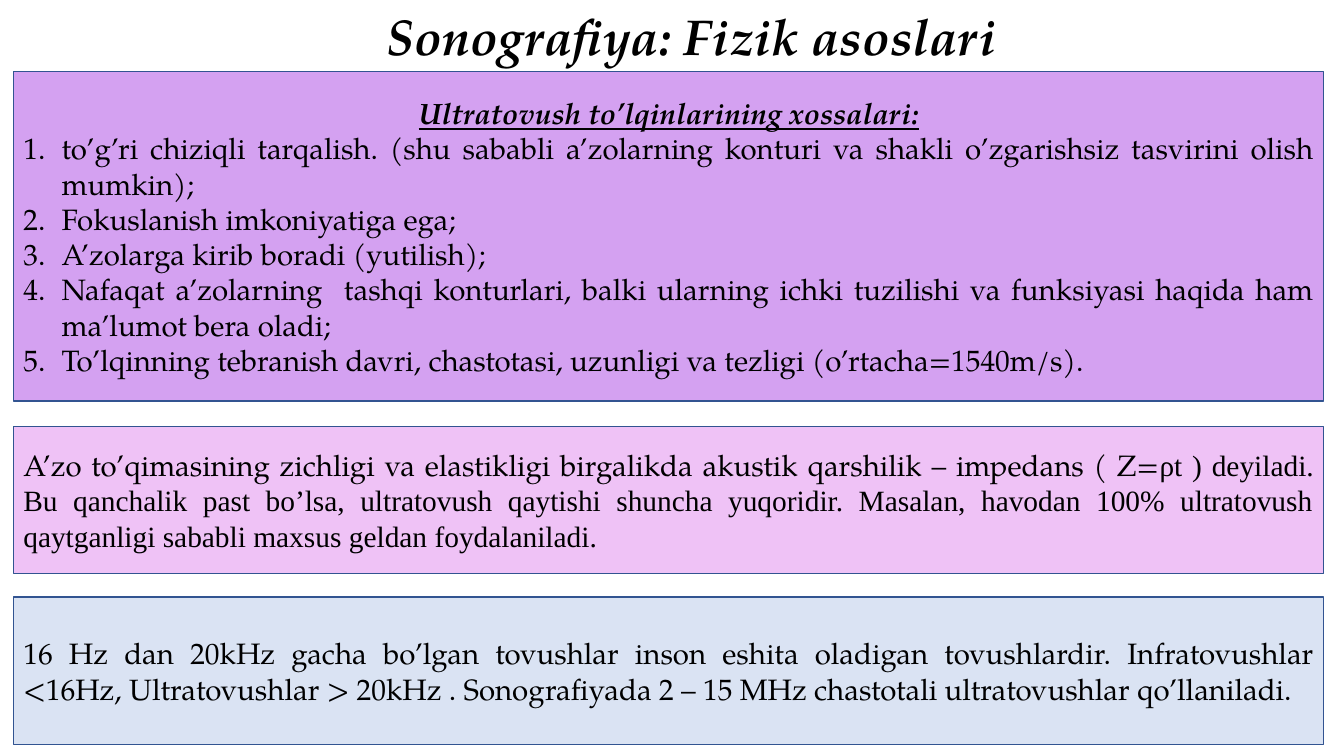
import pptx
import pptx.util
import pptx.dml.color
import pptx.enum.shapes
import pptx.enum.text
import pptx.oxml.ns
import lxml.etree

RGB = pptx.dml.color.RGBColor
BLACK = RGB(0x00, 0x00, 0x00)
EDGE = RGB(0x32, 0x54, 0x91)
VIOLET = RGB(0xD4, 0xA1, 0xF1)
PINK = RGB(0xEF, 0xC2, 0xF6)
BLUE = RGB(0xDA, 0xE3, 0xF3)

SERIF = "TeX Gyre Pagella"
TIMES = "Times New Roman"
ALIGN = pptx.enum.text.PP_ALIGN

WIDE = pptx.util.Inches(13.33)
HIGH = pptx.util.Inches(7.5)
LEFT, SPAN = 1, 97.5  # columns shared by all panels
HANG = pptx.util.Inches(0.38)

TRAITS = (
    "to’g’ri chiziqli tarqalish. (shu sababli a’zolarning konturi va shakli "
    "o’zgarishsiz tasvirini olish mumkin);",
    "Fokuslanish imkoniyatiga ega;",
    "A’zolarga kirib boradi (yutilish);",
    "Nafaqat a’zolarning  tashqi konturlari, balki ularning ichki tuzilishi "
    "va funksiyasi haqida ham ma’lumot bera oladi;",
    "To’lqinning tebranish davri, chastotasi, uzunligi va tezligi "
    "(o’rtacha=1540m/s).",
)


def area(col, row, cols, rows):
    """Turn cells of a 100 by 100 grid into slide lengths."""
    return (int(WIDE * col / 100), int(HIGH * row / 100),
            int(WIDE * cols / 100), int(HIGH * rows / 100))


def add_run(para, text, size=21, face=SERIF, strong=False, under=False):
    run = para.add_run()
    run.text = text
    font = run.font
    font.size = pptx.util.Pt(size)
    font.name = face
    font.bold = font.italic = strong
    font.underline = under
    font.color.rgb = BLACK


def number(para):
    """Give a paragraph a hanging automatic number."""
    props = para._p.get_or_add_pPr()
    props.set("marL", str(HANG))
    props.set("indent", str(-HANG))
    tag = pptx.oxml.ns.qn("a:buAutoNum")
    lxml.etree.SubElement(props, tag, type="arabicPeriod")


def add_panel(slide, row, rows, fill):
    """Draw a full-width panel and return its text frame."""
    kind = pptx.enum.shapes.MSO_SHAPE.RECTANGLE
    panel = slide.shapes.add_shape(kind, *area(LEFT, row, SPAN, rows))
    panel.shadow.inherit = False
    panel.fill.solid()
    panel.fill.fore_color.rgb = fill
    panel.line.color.rgb = EDGE
    panel.line.width = pptx.util.Pt(1)
    frame = panel.text_frame
    frame.word_wrap = True
    frame.vertical_anchor = pptx.enum.text.MSO_ANCHOR.MIDDLE
    frame.paragraphs[0].alignment = ALIGN.JUSTIFY
    return frame


def add_title(slide, text):
    box = slide.shapes.add_textbox(*area(28, 0, 64, 9.4))
    box.text_frame.word_wrap = True
    add_run(box.text_frame.paragraphs[0], text, size=36, strong=True)


def add_list(frame, head, items):
    first = frame.paragraphs[0]
    first.alignment = ALIGN.CENTER
    add_run(first, head, strong=True, under=True)
    for item in items:
        para = frame.add_paragraph()
        para.alignment = ALIGN.JUSTIFY
        number(para)
        add_run(para, item)


def main():
    deck = pptx.Presentation()
    deck.slide_width, deck.slide_height = WIDE, HIGH
    slide = deck.slides.add_slide(deck.slide_layouts[6])

    traits = add_panel(slide, 9.45, 43.6, VIOLET)
    add_list(traits, "Ultratovush to’lqinlarining xossalari:", TRAITS)

    add_title(slide, "Sonografiya: Fizik asoslari")

    sounds = add_panel(slide, 78.95, 19.5, BLUE).paragraphs[0]
    add_run(sounds, "16 Hz dan 20kHz gacha bo’lgan tovushlar inson eshita "
            "oladigan tovushlardir. Infratovushlar <16Hz, Ultratovushlar "
            "> 20kHz . Sonografiyada 2 – 15 MHz chastotali ultratovushlar "
            "qo’llaniladi.")

    echo = add_panel(slide, 56.4, 19.5, PINK).paragraphs[0]
    add_run(echo, "A’zo to’qimasining zichligi va elastikligi birgalikda "
            "akustik qarshilik – impedans ( Z=")
    add_run(echo, "ρt ) deyiladi. Bu qanchalik past bo’lsa, ultratovush "
            "qaytishi shuncha yuqoridir. Masalan, havodan 100% ultratovush "
            "qaytganligi sababli maxsus geldan foydalaniladi.", face=TIMES)

    deck.save("out.pptx")


if __name__ == "__main__":
    main()
